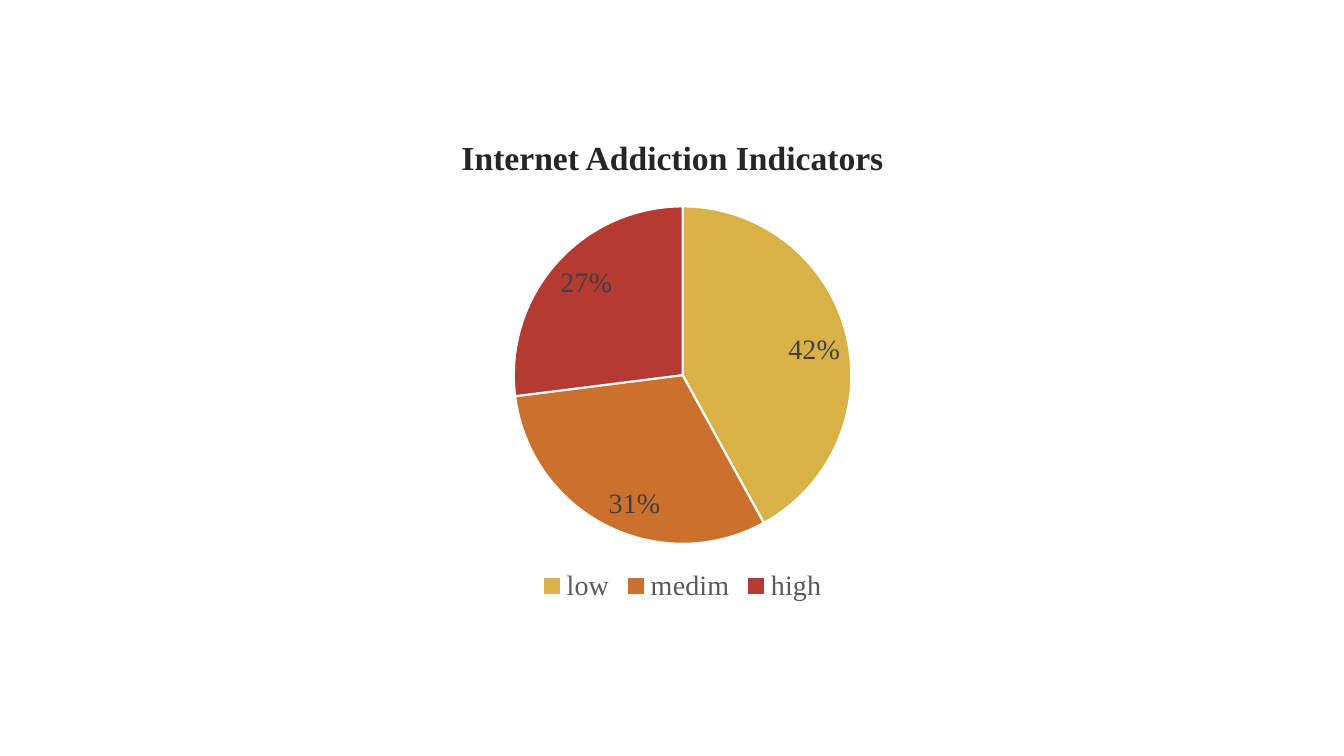
from pptx import Presentation
from pptx import util as u
from pptx.chart.data import CategoryChartData
from pptx.dml.color import RGBColor
from pptx.enum import chart as ch, text

TITLE = "Internet Addiction Indicators"
FONT = "Times New Roman"
WHITE = RGBColor(0xFF, 0xFF, 0xFF)
INK = RGBColor(0x26, 0x26, 0x26)
DARK = RGBColor(0x40, 0x40, 0x40)
GREY = RGBColor(0x59, 0x59, 0x59)
LEVELS = [
    ("low", 0.42, RGBColor(0xD9, 0xB2, 0x47)),
    ("medim", 0.31, RGBColor(0xCC, 0x70, 0x2D)),
    ("high", 0.27, RGBColor(0xB5, 0x3A, 0x31)),
]
TITLE_BOX = (0.93, 0.84, 11.48, 1.43)
PIE_BOX = (1.7, 1.91, 10.14, 4.12)


def style(font, size, color, bold=False):
    font.name, font.size, font.bold = FONT, u.Pt(size), bold
    font.color.rgb = color


def add_title(slide):
    title = slide.shapes.title
    title.left, title.top, title.width, title.height = map(u.Inches, TITLE_BOX)
    frame = title.text_frame
    frame.text = TITLE
    frame.vertical_anchor = text.MSO_ANCHOR.MIDDLE
    para = frame.paragraphs[0]
    para.alignment = text.PP_ALIGN.CENTER
    style(para.runs[0].font, 24, INK, True)


def add_pie(slide):
    names, shares, colors = zip(*LEVELS)
    data = CategoryChartData(number_format="0%")
    data.categories = names
    data.add_series("Series 1", shares)
    pie = slide.shapes.add_chart(
        ch.XL_CHART_TYPE.PIE, *map(u.Inches, PIE_BOX), data).chart
    pie.has_title = False
    style(pie.font, 20, GREY)

    pie.has_legend = True
    pie.legend.position = ch.XL_LEGEND_POSITION.BOTTOM
    pie.legend.include_in_layout = False
    style(pie.legend.font, 20, GREY)

    plot = pie.plots[0]
    plot.vary_by_categories = True
    for index, color in enumerate(colors):
        look = plot.series[0].points[index].format
        look.fill.solid()
        look.fill.fore_color.rgb = color
        look.line.color.rgb = WHITE
        look.line.width = u.Pt(1.5)

    labels = plot.series[0].data_labels
    labels.show_value = True
    labels.show_percentage = False
    labels.number_format = "0%"
    labels.number_format_is_linked = False
    labels.position = ch.XL_LABEL_POSITION.INSIDE_END
    style(labels.font, 20, DARK)


def main():
    deck = Presentation()
    deck.slide_width, deck.slide_height = u.Inches(13.33), u.Inches(7.5)
    slide = deck.slides.add_slide(deck.slide_layouts[5])
    add_title(slide)
    add_pie(slide)
    deck.save("out.pptx")


if __name__ == "__main__":
    main()
